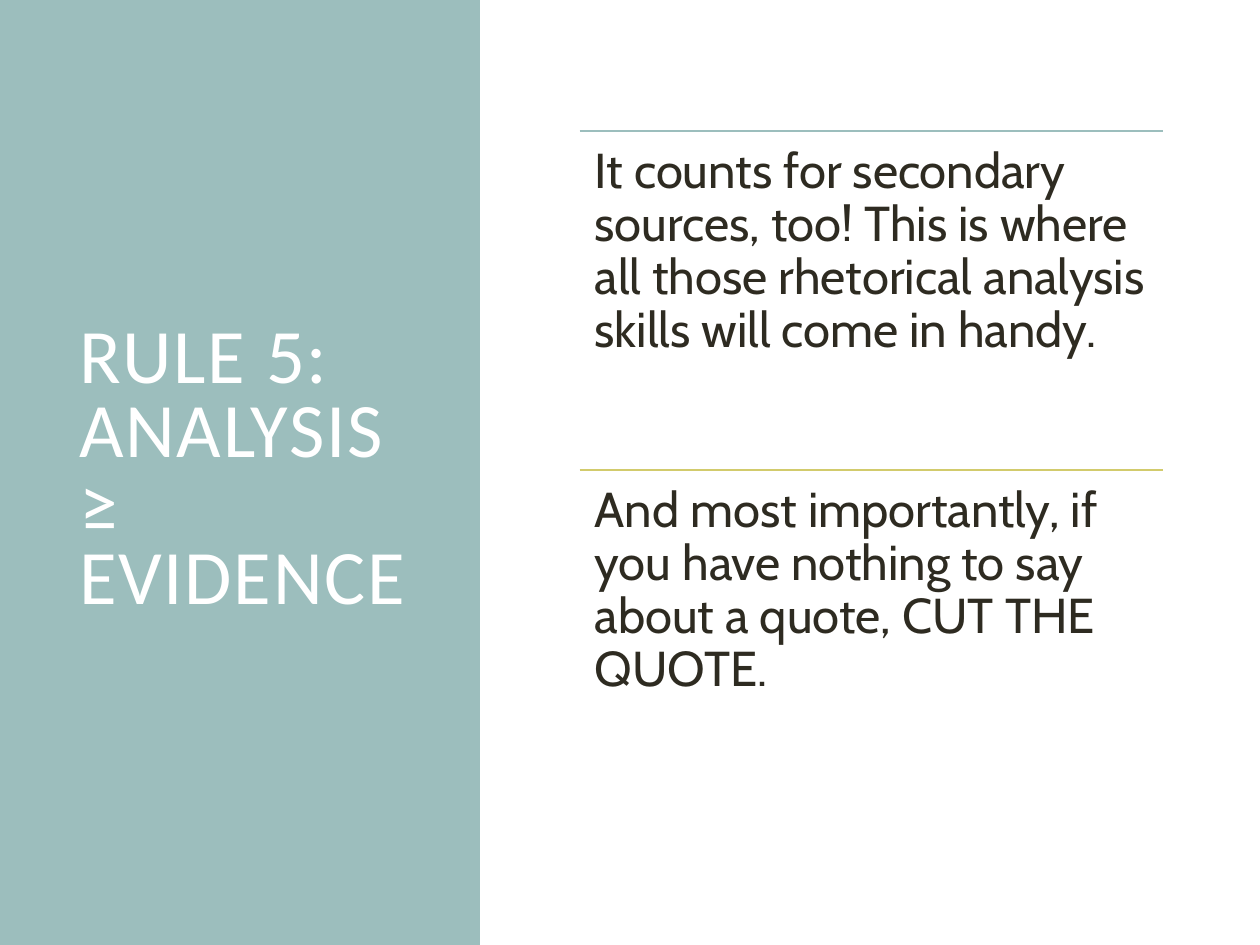
from lxml import etree
from pptx import Presentation
from pptx.dml.color import RGBColor
from pptx.enum import shapes, text
from pptx.oxml.ns import qn
from pptx.util import Inches, Pt

TEAL, GOLD, INK, WHITE = "9CBEBD", "D2CB6C", "2E2B21", "FFFFFF"
POINTS = [
    (TEAL, "It counts for secondary sources, too! This is where all those "
           "rhetorical analysis skills will come in handy."),
    (GOLD, "And most importantly, if you have nothing to say about a quote, "
           "CUT THE QUOTE."),
]


def paint(fmt, color):
    """Set a font, fill or line colour from a hex string."""
    fmt.rgb = RGBColor.from_string(color)


def add_text(slide, box, words, font, size, color, inset, spacing, anchor):
    frame = slide.shapes.add_textbox(*map(Inches, box)).text_frame
    frame.word_wrap = True
    frame.vertical_anchor = anchor
    frame.margin_left = frame.margin_right = Inches(inset[0])
    frame.margin_top = frame.margin_bottom = Inches(inset[1])
    para = frame.paragraphs[0]
    para.text = words
    para.line_spacing = spacing
    run = para.runs[0]
    run.font.name, run.font.size = font, Pt(size)
    paint(run.font.color, color)
    return run


def add_panel(slide, left, top, width, height):
    # Colour band
    band = slide.shapes.add_shape(shapes.MSO_SHAPE.RECTANGLE,
                                  *map(Inches, (left, top, width, height)))
    band.shadow.inherit = False
    band.fill.solid()
    paint(band.fill.fore_color, TEAL)
    band.line.fill.background()
    # Title, letterspaced by one point
    box = (left + 0.53, top + 0.7, 2.8, 6.09)
    run = add_text(slide, box, "RULE 5: ANALYSIS ≥ EVIDENCE", "Calibri", 44,
                   WHITE, (0.1, 0.05), 0.8, text.MSO_ANCHOR.MIDDLE)
    run.font._element.set("spc", "100")


def add_points(slide, left, top, width, height):
    step = height / len(POINTS)
    for i, (color, words) in enumerate(POINTS):
        y = top + i * step
        # Rule above the point
        rule = slide.shapes.add_connector(
            shapes.MSO_CONNECTOR.STRAIGHT,
            *map(Inches, (left, y, left + width, y)))
        paint(rule.line.color, color)
        rule.line.width = Pt(1.25)
        etree.SubElement(rule._element.spPr, qn("a:effectLst"))
        # Point text
        add_text(slide, (left, y, width, step), words, "Cabin", 28, INK,
                 (0.12, 0.12), 0.9, text.MSO_ANCHOR.TOP)


def main():
    deck = Presentation()
    deck.slide_width, deck.slide_height = Inches(10), Inches(7.5)
    slide = deck.slides.add_slide(deck.slide_layouts[6])
    add_panel(slide, 0, 0, 3.81, 7.5)
    add_points(slide, 4.6, 1.04, 4.63, 5.38)
    deck.save("out.pptx")


if __name__ == "__main__":
    main()
